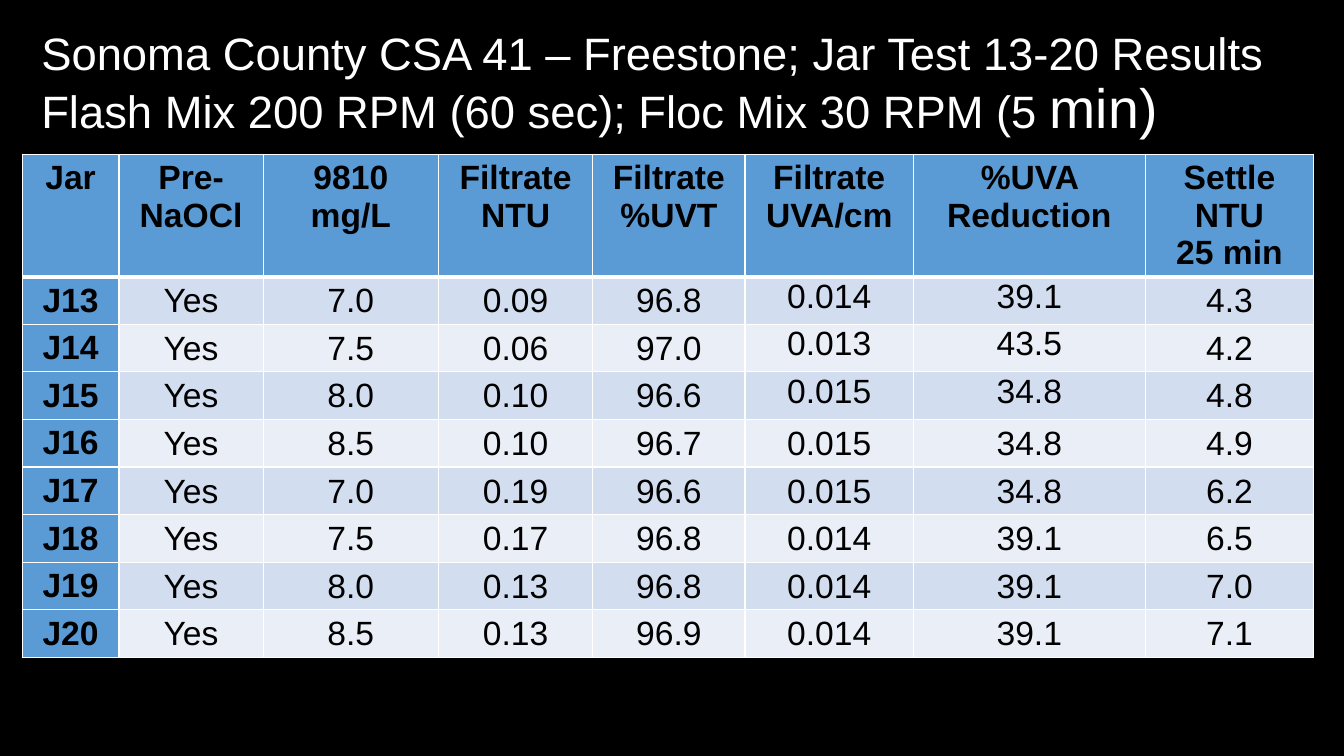
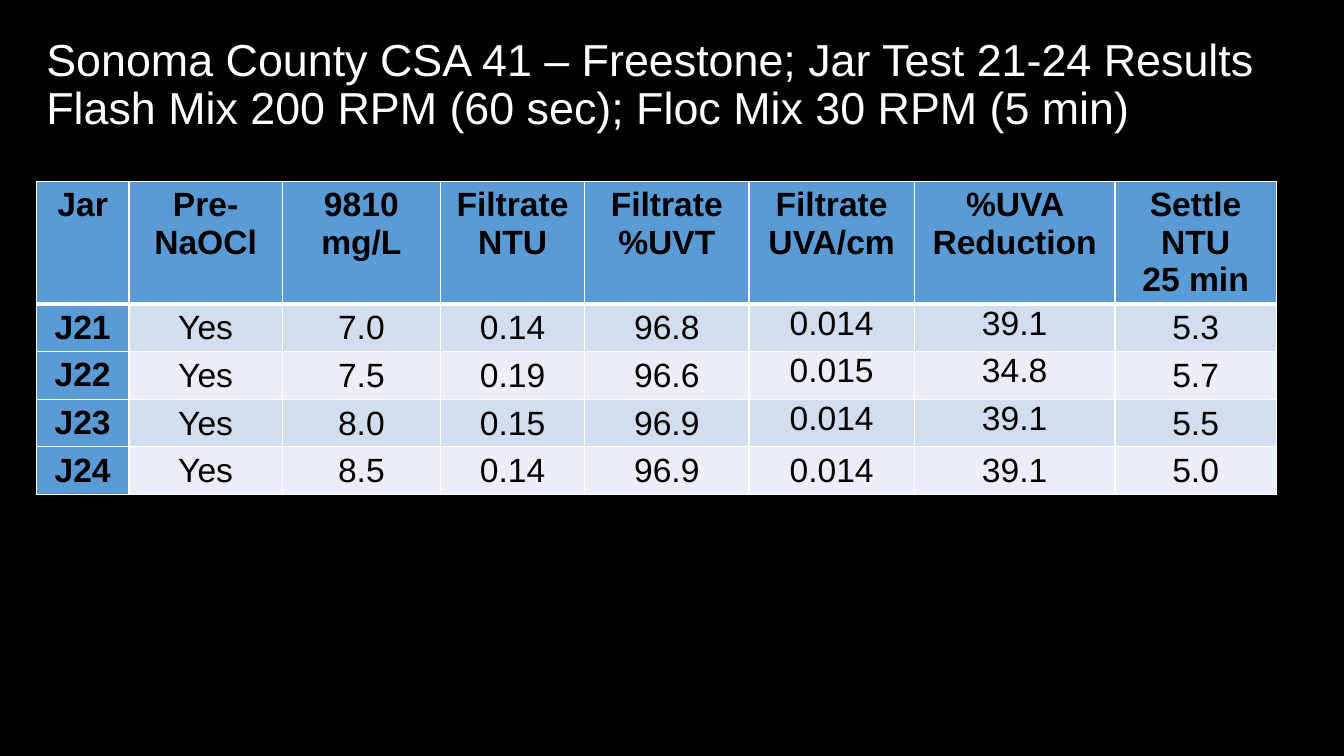
from lxml import etree
from pptx import Presentation
from pptx.dml.color import RGBColor
from pptx.enum.text import MSO_ANCHOR, MSO_AUTO_SIZE, PP_ALIGN
from pptx.oxml.ns import qn
from pptx.util import Inches, Pt

LEFT, CENTER = PP_ALIGN.LEFT, PP_ALIGN.CENTER
TOP, MIDDLE = MSO_ANCHOR.TOP, MSO_ANCHOR.MIDDLE
NO_FIT = MSO_AUTO_SIZE.NONE

FONT = "Arial"
BLACK, WHITE = "000000", "FFFFFF"
HEADER_BLUE = "5B9BD5"
BANDS = ("D2DEEF", "EAEFF7")
TITLE_ONLY = 5

HEADER = ("Jar", "Pre-NaOCl", "9810\nmg/L", "Filtrate\nNTU", "Filtrate\n%UVT",
          "Filtrate\nUVA/cm", "%UVA Reduction", "Settle\nNTU\n25 min")
HEADER_HEIGHT, ROW_HEIGHT = 1.21, 0.47
UVA_COLUMNS = (5, 6)
TOP_ALIGNED_ROWS = 3  # the UVA values sit at the top of the first rows

# Jar, pre-chlorination, dose, NTU, UVT, UVA, reduction, settled NTU
JARS_13_TO_20 = """
J13 Yes 7.0 0.09 96.8 0.014 39.1 4.3
J14 Yes 7.5 0.06 97.0 0.013 43.5 4.2
J15 Yes 8.0 0.10 96.6 0.015 34.8 4.8
J16 Yes 8.5 0.10 96.7 0.015 34.8 4.9
J17 Yes 7.0 0.19 96.6 0.015 34.8 6.2
J18 Yes 7.5 0.17 96.8 0.014 39.1 6.5
J19 Yes 8.0 0.13 96.8 0.014 39.1 7.0
J20 Yes 8.5 0.13 96.9 0.014 39.1 7.1
"""
JARS_21_TO_24 = """
J21 Yes 7.0 0.14 96.8 0.014 39.1 5.3
J22 Yes 7.5 0.19 96.6 0.015 34.8 5.7
J23 Yes 8.0 0.15 96.9 0.014 39.1 5.5
J24 Yes 8.5 0.14 96.9 0.014 39.1 5.0
"""


def color(value):
    return RGBColor.from_string(value)


def add_span(para, text, size=24, fill=BLACK, bold=False):
    span = para.add_run()
    span.text = text
    span.font.name = FONT
    span.font.size = Pt(size)
    span.font.bold = bold
    span.font.color.rgb = color(fill)


def set_borders(cell, top=1, bottom=1):
    """Draw white borders; call before the cell is filled."""
    properties = cell._tc.get_or_add_tcPr()
    for side, width in (("L", 1), ("R", 1), ("T", top), ("B", bottom)):
        line = etree.SubElement(properties, qn(f"a:ln{side}"), w=str(Pt(width)))
        fill = etree.SubElement(line, qn("a:solidFill"))
        etree.SubElement(fill, qn("a:srgbClr"), val=WHITE)


class JarTestDeck:
    def __init__(self):
        self.deck = Presentation()
        self.deck.slide_width = Inches(13.33)
        self.deck.slide_height = Inches(7.5)
        background = self.deck.slide_master.background.fill
        background.solid()
        background.fore_color.rgb = color(BLACK)
        self.page = None

    def add_page(self):
        layout = self.deck.slide_layouts[TITLE_ONLY]
        self.page = self.deck.slides.add_slide(layout)

    def add_title(self, jars, left, width, size, last_size):
        box = self.page.shapes.title
        box.left, box.top = Inches(left), Inches(0.13)
        box.width, box.height = Inches(width), Inches(1.45)
        frame = box.text_frame
        frame.word_wrap = True
        frame.auto_size = NO_FIT
        frame.vertical_anchor = MIDDLE
        para = frame.paragraphs[0]
        para.alignment = LEFT
        para.line_spacing = 0.9
        add_span(para, f"Sonoma County CSA 41 – Freestone; Jar Test {jars} Results",
                 size=size, fill=WHITE)
        para.add_line_break()
        add_span(para, "Flash Mix 200 RPM (60 sec); Floc Mix 30 RPM (5 ",
                 size=size, fill=WHITE)
        add_span(para, "min)", size=last_size, fill=WHITE)

    def add_cell(self, cell, text, row, column):
        is_header, is_label = row == 0, column == 0
        set_borders(cell, top=3 if row == 1 else 1, bottom=3 if is_header else 1)
        cell.fill.solid()
        cell.fill.fore_color.rgb = color(
            HEADER_BLUE if is_header or is_label else BANDS[(row - 1) % 2])
        if not (is_header or is_label):
            cell.margin_left = cell.margin_right = cell.margin_top = Inches(0.01)
            cell.margin_bottom = 0
            at_top = column in UVA_COLUMNS and row <= TOP_ALIGNED_ROWS
            cell.vertical_anchor = TOP if at_top else MIDDLE
        frame = cell.text_frame
        for index, line in enumerate(text.split("\n")):
            para = frame.add_paragraph() if index else frame.paragraphs[0]
            para.alignment = CENTER
            add_span(para, line, bold=is_header or is_label)

    def add_results(self, data, left, top, widths):
        rows = [HEADER] + [line.split() for line in data.strip().splitlines()]
        height = HEADER_HEIGHT + ROW_HEIGHT * (len(rows) - 1)
        table = self.page.shapes.add_table(
            len(rows), len(widths), Inches(left), Inches(top),
            Inches(sum(widths)), Inches(height)).table
        for column, width in zip(table.columns, widths):
            column.width = Inches(width)
        for row, values in enumerate(rows):
            table.rows[row].height = Inches(ROW_HEIGHT if row else HEADER_HEIGHT)
            for column, text in enumerate(values):
                self.add_cell(table.cell(row, column), text, row, column)


def main():
    show = JarTestDeck()

    # Jars 13 to 20
    show.add_page()
    show.add_title("13-20", left=0.31, width=12.64, size=32.4, last_size=39.6)
    show.add_results(JARS_13_TO_20, left=0.22, top=1.53,
                     widths=(0.96, 1.43, 1.74, 1.53, 1.51, 1.67, 2.3, 1.67))

    # Jars 21 to 24
    show.add_page()
    show.add_title("21-24", left=0.36, width=12.5, size=32, last_size=32)
    show.add_results(JARS_21_TO_24, left=0.36, top=1.8,
                     widths=(0.92, 1.52, 1.57, 1.43, 1.63, 1.64, 1.99, 1.6))

    show.deck.save("out.pptx")


if __name__ == "__main__":
    main()
